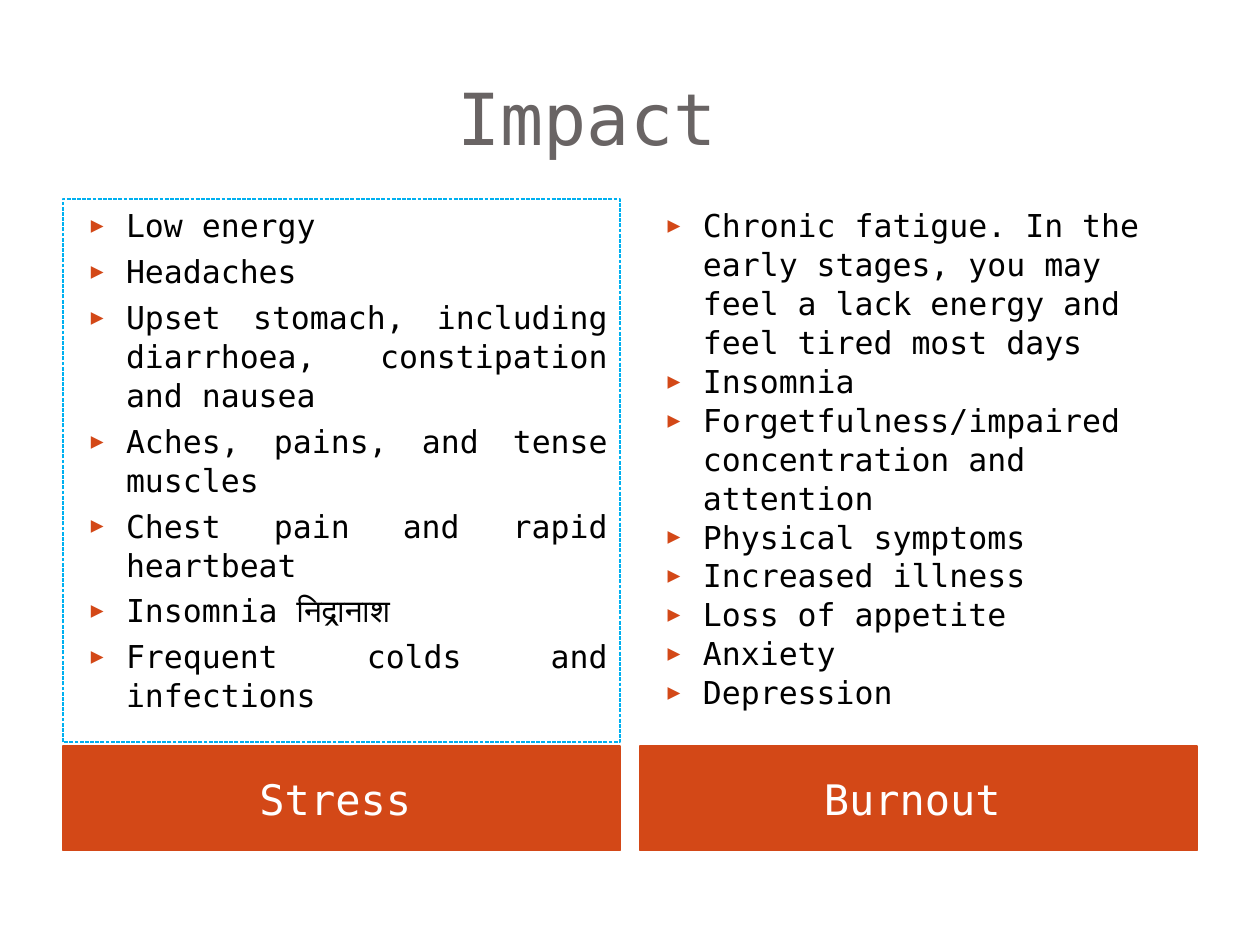
from lxml import etree
from pptx import Presentation
from pptx import util as u
from pptx.dml.color import RGBColor
from pptx.enum import dml, text
from pptx.oxml.ns import qn

COLOURS = {
    "title": "696464",
    "accent": "D34817",
    "outline": "00B0F0",
    "body": "000000",
    "light": "FFFFFF",
}
FONT = "DejaVu Sans Mono"
COLUMN_LEFTS = (1.27, 12.9)
COLUMN_WIDTH = 11.23

STRESS = [
    "Low energy",
    "Headaches",
    "Upset stomach, including diarrhoea, constipation and nausea",
    "Aches, pains, and tense muscles",
    "Chest pain and rapid heartbeat",
    "Insomnia निद्रानाश",
    "Frequent colds and infections",
]
BURNOUT = [
    "Chronic fatigue. In the early stages, you may feel a lack energy and feel tired most days",
    "Insomnia",
    "Forgetfulness/impaired concentration and attention",
    "Physical symptoms",
    "Increased illness",
    "Loss of appetite",
    "Anxiety",
    "Depression",
]


def colour(name):
    return RGBColor.from_string(COLOURS[name])


def apply(target, values):
    for name, value in values.items():
        setattr(target, name, value)


class ImpactSlide:
    def __init__(self, presentation):
        self.slide = presentation.slides.add_slide(presentation.slide_layouts[4])

    def place(self, index, left, top, width, height, anchor, margins=(0.25, 0.25)):
        shape = self.slide.placeholders[index]
        apply(shape, {"left": u.Cm(left), "top": u.Cm(top),
                      "width": u.Cm(width), "height": u.Cm(height)})
        apply(shape.text_frame, {
            "word_wrap": True,
            "auto_size": text.MSO_AUTO_SIZE.NONE,
            "vertical_anchor": anchor,
            "margin_left": u.Cm(margins[0]),
            "margin_right": u.Cm(margins[1]),
            "margin_top": u.Cm(0.13),
            "margin_bottom": u.Cm(0.13),
        })
        return shape

    def fill_paragraph(self, paragraph, words, size, colour_name, **layout):
        paragraph.text = words
        apply(paragraph, {"space_before": u.Pt(0), **layout})
        apply(paragraph.font, {"name": FONT, "size": u.Pt(size), "bold": False})
        paragraph.font.color.rgb = colour(colour_name)

    def bullet(self, paragraph):
        properties = paragraph._p.get_or_add_pPr()
        properties.set("marL", str(u.Cm(1.02)))
        properties.set("indent", str(-u.Cm(0.71)))
        bullet_colour = etree.SubElement(properties, qn("a:buClr"))
        etree.SubElement(bullet_colour, qn("a:srgbClr"), val=COLOURS["accent"])
        etree.SubElement(properties, qn("a:buSzPct"), val="68000")
        etree.SubElement(properties, qn("a:buFont"), typeface=FONT)
        etree.SubElement(properties, qn("a:buChar"), char="▶")

    def title(self, words):
        shape = self.place(0, 1.27, 0.76, 22.86, 3.18,
                           text.MSO_ANCHOR.MIDDLE, (0.25, 1.98))
        self.fill_paragraph(shape.text_frame.paragraphs[0], words, 41, "title",
                            alignment=text.PP_ALIGN.CENTER)

    def banner(self, index, left, words):
        shape = self.place(index, left, 15.04, COLUMN_WIDTH, 2.11,
                           text.MSO_ANCHOR.MIDDLE, (0.51, 0.25))
        shape.fill.solid()
        shape.fill.fore_color.rgb = colour("accent")
        shape.line.color.rgb = colour("accent")
        shape.line.width = u.Pt(0.75)
        self.fill_paragraph(shape.text_frame.paragraphs[0], words, 24, "light",
                            alignment=text.PP_ALIGN.CENTER)

    def bullets(self, index, left, items, alignment, gap):
        shape = self.place(index, left, 4.01, COLUMN_WIDTH, 10.95, text.MSO_ANCHOR.TOP)
        frame = shape.text_frame
        for number, item in enumerate(items):
            paragraph = frame.add_paragraph() if number else frame.paragraphs[0]
            self.bullet(paragraph)
            self.fill_paragraph(paragraph, item, 18, "body", alignment=alignment,
                                line_spacing=1.03,
                                space_before=u.Pt(gap if number else 0))
        return shape

    def outline(self, shape):
        shape.line.color.rgb = colour("outline")
        apply(shape.line, {"width": u.Pt(0.75),
                           "dash_style": dml.MSO_LINE.SQUARE_DOT})


def main():
    presentation = Presentation()
    apply(presentation, {"slide_width": u.Cm(25.4), "slide_height": u.Cm(19.05)})
    impact = ImpactSlide(presentation)
    left, right = COLUMN_LEFTS
    impact.title("Impact")
    impact.banner(1, left, "Stress ")
    impact.banner(3, right, "Burnout ")
    stress = impact.bullets(2, left, STRESS, text.PP_ALIGN.JUSTIFY, 4)
    impact.outline(stress)
    impact.bullets(4, right, BURNOUT, text.PP_ALIGN.LEFT, 0)
    presentation.save("out.pptx")


if __name__ == "__main__":
    main()
